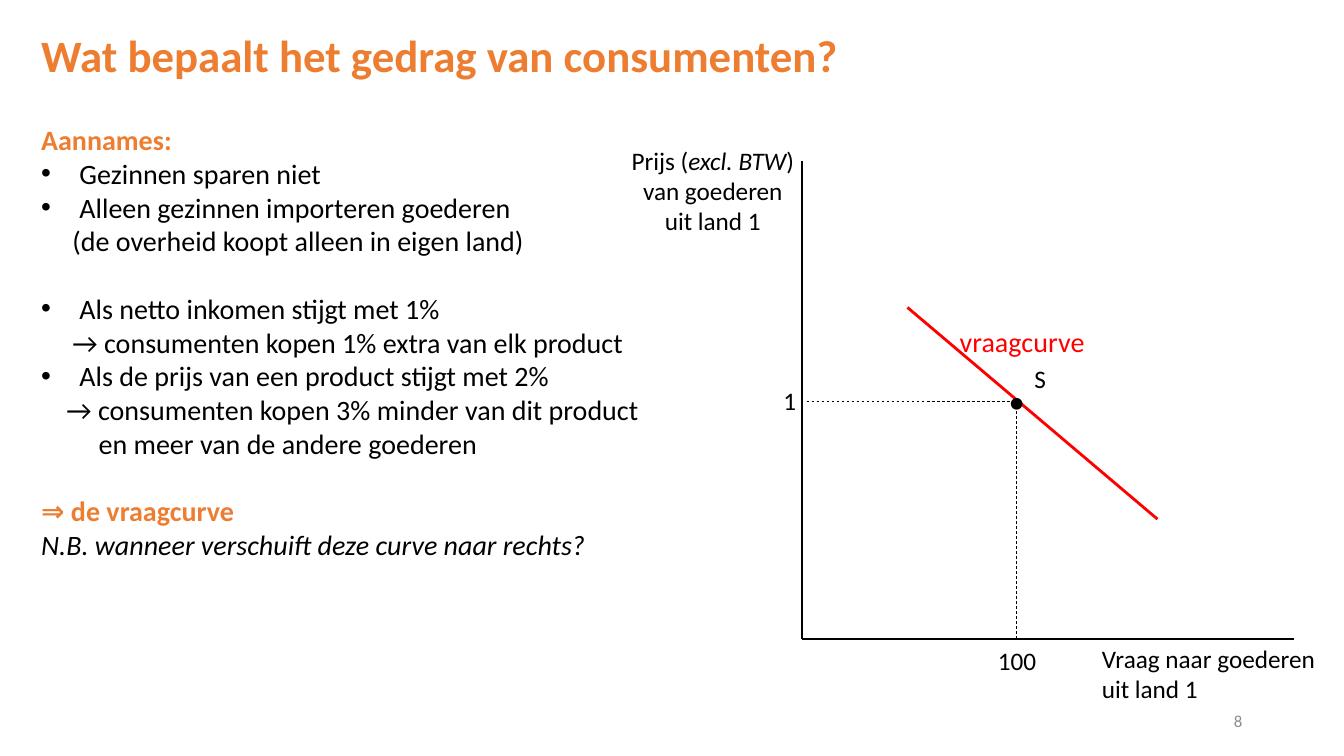
from lxml import etree
from pptx import Presentation
from pptx.dml.color import RGBColor
from pptx.enum.dml import MSO_LINE
from pptx.enum.shapes import MSO_CONNECTOR
from pptx.enum.text import MSO_ANCHOR, PP_ALIGN
from pptx.oxml.ns import qn
from pptx.util import Emu, Pt

STRAIGHT = MSO_CONNECTOR.STRAIGHT
DASH = MSO_LINE.DASH
TOP, MIDDLE = MSO_ANCHOR.TOP, MSO_ANCHOR.MIDDLE
CENTER, RIGHT = PP_ALIGN.CENTER, PP_ALIGN.RIGHT
PX = 9144
FONT = "Calibri"
ORANGE = RGBColor(0xED, 0x7D, 0x31)
BLACK = RGBColor(0, 0, 0)
RED = RGBColor(0xFF, 0, 0)
GRAY = RGBColor(0x8C, 0x8C, 0x8C)

ACCENT = {"bold": True, "color": ORANGE}
BODY = {"size": Pt(20)}
BULLET_INDENT = 38
BLANK_LINE = Pt(24.4)
ORIGIN_X, ORIGIN_Y = 795, 634
POINT_X, POINT_Y = 1008, 398


def px(length):
    """Turn px into EMU."""
    return Emu(length * PX)


def add_span(para, text, color=BLACK, **font_format):
    """Append a run with the given font values."""
    span = para.add_run()
    span.text = text
    span.font.color.rgb = color
    for name, value in ({"name": FONT, "size": Pt(18)} | font_format).items():
        setattr(span.font, name, value)


def indent(para, left, bullet=False):
    """Indent a paragraph, hanging it from a bullet if asked."""
    properties = para._p.get_or_add_pPr()
    properties.set("marL", str(px(left)))
    properties.set("indent", str(px(-left if bullet else 0)))
    if bullet:
        etree.SubElement(properties, qn("a:buFont"), typeface="Arial")
        etree.SubElement(properties, qn("a:buChar"), char="•")


def add_para(frame, spans, left=0, bullet=False, **para_format):
    """Add a paragraph of (text, font values) spans."""
    para = frame.paragraphs[0]
    if para.runs:
        para = frame.add_paragraph()
    for name, value in para_format.items():
        setattr(para, name, value)
    if left:
        indent(para, left, bullet)
    for text, font_format in spans:
        add_span(para, text, **font_format)


def add_box(page, left, top, width, height, wrap=True, anchor=TOP):
    """Add a text box and return its text frame."""
    box = page.shapes.add_textbox(px(left), px(top), px(width), px(height))
    frame = box.text_frame
    frame.word_wrap = wrap
    frame.vertical_anchor = anchor
    return frame


def add_label(page, bounds, text, wrap=True, **font_format):
    """Add a box with one line of text."""
    add_para(add_box(page, *bounds, wrap=wrap), [(text, font_format)])


def add_line(page, start, end, color=BLACK, width=1.5, dash=None):
    """Draw a straight line between two points."""
    line = page.shapes.add_connector(STRAIGHT, *map(px, start + end))
    line.line.color.rgb = color
    line.line.width = Pt(width)
    line.line.dash_style = dash
    etree.SubElement(line._element.spPr, qn("a:effectLst"))


def add_assumptions(page):
    """Write the title and the list of assumptions."""
    frame = add_box(page, 31, 23, 1271, 611)
    bullet = {"left": BULLET_INDENT, "bullet": True}
    after_blank = {"space_before": BLANK_LINE}
    lines = [
        ("Wat bepaalt het gedrag van consumenten?", ACCENT | {"size": Pt(32)}, {}),
        ("Aannames:", ACCENT, {"space_before": Pt(29.3)}),
        ("Gezinnen sparen niet", {}, bullet),
        ("Alleen gezinnen importeren goederen", {}, bullet),
        ("(de overheid koopt alleen in eigen land)", {}, {"left": 31}),
        ("Als netto inkomen stijgt met 1%", {}, bullet | after_blank),
        ("→ consumenten kopen 1% extra van elk product", {}, {"left": 31}),
        ("Als de prijs van een product stijgt met 2%", {}, bullet),
        ("→ consumenten kopen 3% minder van dit product", {}, {"left": 25}),
        ("en meer van de andere goederen", {}, {"left": 57}),
        ("⇒ de vraagcurve", ACCENT, after_blank),
        ("N.B. wanneer verschuift deze curve naar rechts?", {"italic": True}, {}),
    ]
    for text, font_format, para_format in lines:
        add_para(frame, [(text, BODY | font_format)], **para_format)


def add_demand_graph(page):
    """Draw the axes, the demand curve and point S."""
    add_line(page, (ORIGIN_X, 160), (ORIGIN_X, ORIGIN_Y))
    add_line(page, (ORIGIN_X, ORIGIN_Y), (1283, ORIGIN_Y))
    add_line(page, (1148, 515), (900, 305), RED, 2)
    add_line(page, (800, POINT_Y), (POINT_X, POINT_Y), width=0.5, dash=DASH)
    add_line(page, (POINT_X, ORIGIN_Y), (POINT_X, POINT_Y), width=0.5, dash=DASH)

    price = add_box(page, 615, 139, 184, 101)
    title = [("Prijs (", {}), ("excl. BTW", {"italic": True}), (")", {})]
    add_para(price, title, alignment=CENTER)
    add_para(price, [("van goederen uit land 1", {})], alignment=CENTER)

    demand = add_box(page, 1083, 633, 250, 71)
    for text in ("Vraag naar goederen", "uit land 1"):
        add_para(demand, [(text, {})])

    add_label(page, (1016, 356, 41, 40), "S")
    add_label(page, (991, 378, 67, 40), "●")
    add_label(page, (980, 635, 66, 40), "100")
    add_label(page, (767, 377, 49, 40), "1")
    add_label(page, (942, 317, 145, 44), "vraagcurve", wrap=False, color=RED, **BODY)


def main():
    """Build the slide and save it."""
    deck = Presentation()
    deck.slide_width, deck.slide_height = px(1333), px(750)
    page = deck.slides.add_slide(deck.slide_layouts[6])
    add_assumptions(page)
    add_demand_graph(page)
    number = add_box(page, 942, 695, 300, 40, anchor=MIDDLE)
    add_para(number, [("8", {"size": Pt(12), "color": GRAY})], alignment=RIGHT)
    deck.save("out.pptx")


if __name__ == "__main__":
    main()
